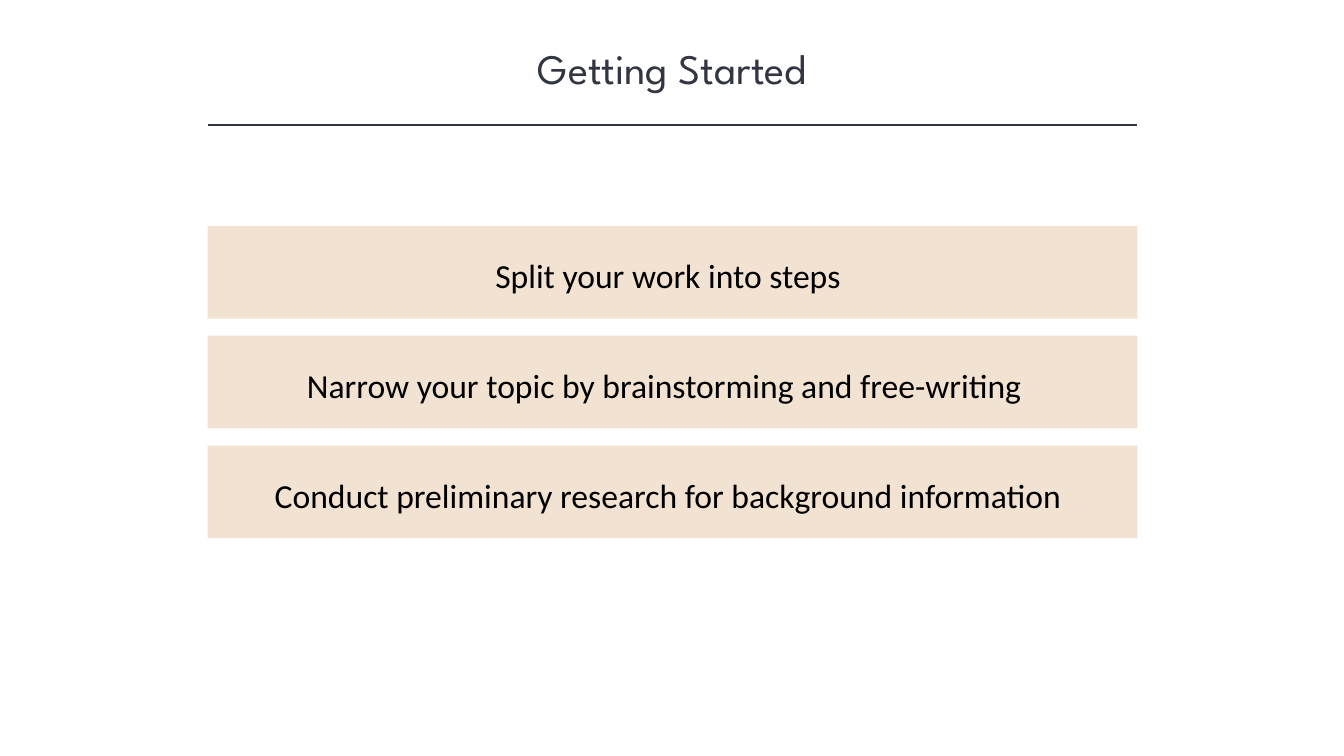
from pptx import Presentation
from pptx.dml.color import RGBColor
from pptx.enum.shapes import MSO_CONNECTOR, MSO_SHAPE
from pptx.enum.text import MSO_ANCHOR, MSO_AUTO_SIZE, PP_ALIGN
from pptx.oxml.ns import qn
from pptx.util import Inches, Pt
from lxml import etree

TITLE = "Getting Started"
STEPS = [
    "Split your work into steps",
    "Narrow your topic by brainstorming and free-writing ",
    "Conduct preliminary research for background information",
]
COLORS = {"ink": "323542", "band": "F2E2D2", "text": "000000"}

# Layout in inches
LEFT, WIDTH = 2.06, 9.22
RULE_Y = 1.24
BAND_TOP, BAND_HEIGHT, BAND_PITCH = 2.24, 0.92, 1.09
LABEL_DX, LABEL_DY, LABEL_WIDTH, LABEL_HEIGHT = 0.1, 0.24, 8.93, 0.5


def rgb(name):
    return RGBColor.from_string(COLORS[name])


def add_band(slide, x, y, w, h):
    sp = slide.shapes.add_shape(
        MSO_SHAPE.RECTANGLE, Inches(x), Inches(y), Inches(w), Inches(h))
    sp.shadow.inherit = False
    sp.fill.solid()
    sp.fill.fore_color.rgb = rgb("band")
    sp.line.fill.background()
    return sp


def set_text(sp, text, font, size, color):
    tf = sp.text_frame
    tf.word_wrap = True
    tf.auto_size = MSO_AUTO_SIZE.SHAPE_TO_FIT_TEXT
    tf.vertical_anchor = MSO_ANCHOR.TOP
    p = tf.paragraphs[0]
    p.text = text
    p.alignment = PP_ALIGN.CENTER
    p.font.name = font
    p.font.size = Pt(size)
    p.font.color.rgb = rgb(color)


prs = Presentation()
prs.slide_width, prs.slide_height = Inches(13.33), Inches(7.5)
s = prs.slides.add_slide(prs.slide_layouts[6])

# Title
title = s.shapes.add_textbox(Inches(1.67), Inches(0.37), Inches(10), Inches(0.61))
set_text(title, TITLE, "League Spartan", 30, "ink")

# Rule under the title
rule = s.shapes.add_connector(
    MSO_CONNECTOR.STRAIGHT, Inches(LEFT), Inches(RULE_Y),
    Inches(LEFT + WIDTH), Inches(RULE_Y))
rule.line.color.rgb = rgb("ink")
rule.line.width = Pt(1)
etree.SubElement(rule._element.spPr, qn("a:effectLst"))

# Steps: a band with a label on it
for i, step in enumerate(STEPS):
    y = BAND_TOP + i * BAND_PITCH
    add_band(s, LEFT, y, WIDTH, BAND_HEIGHT)
    label = add_band(s, LEFT + LABEL_DX, y + LABEL_DY, LABEL_WIDTH, LABEL_HEIGHT)
    set_text(label, step, "Calibri", 24, "text")

prs.save("out.pptx")
